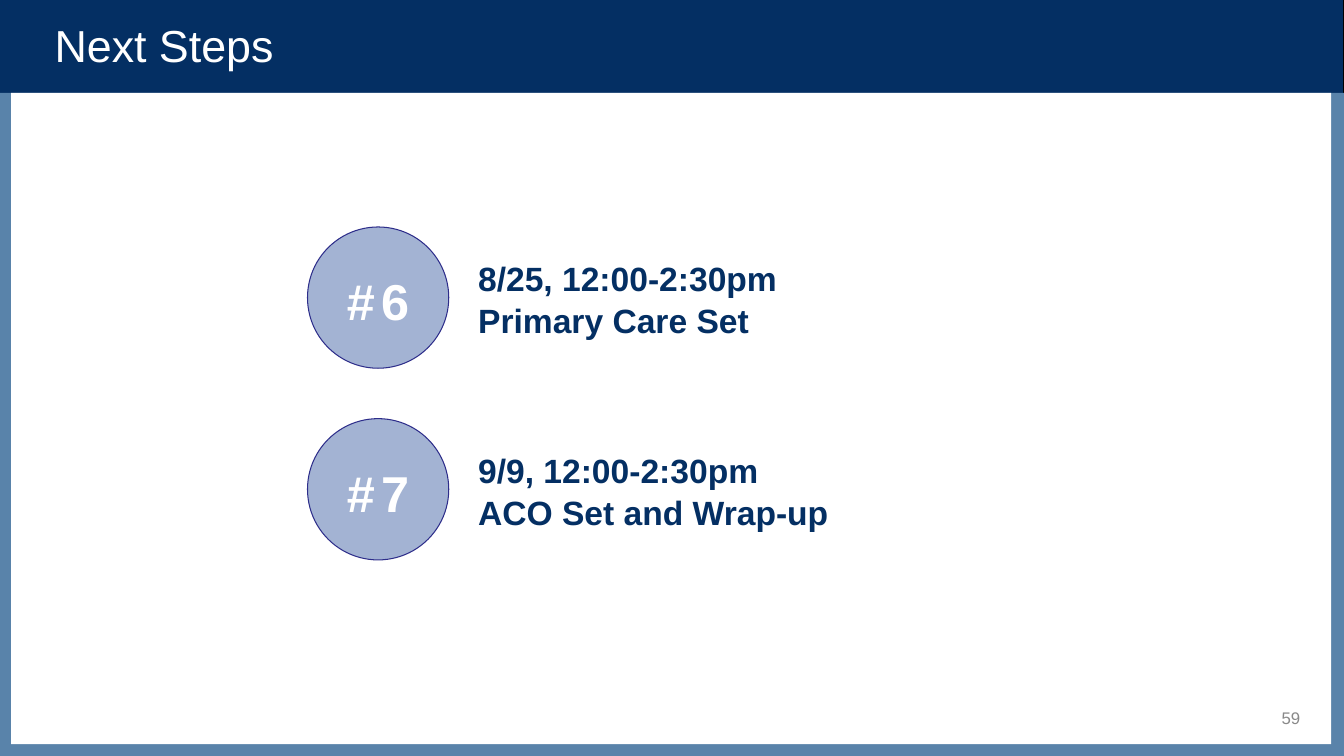
"""Build the "Next Steps" slide with the two upcoming meetings."""
from pptx import Presentation
from pptx.dml.color import RGBColor
from pptx.enum.shapes import MSO_SHAPE
from pptx.enum.text import MSO_ANCHOR, MSO_AUTO_SIZE, PP_ALIGN
from pptx.util import Cm, Pt

NAVY = RGBColor(0x04, 0x2F, 0x63)
STEEL = RGBColor(0x59, 0x83, 0xAA)
PALE_BLUE = RGBColor(0xA3, 0xB3, 0xD3)
INDIGO = RGBColor(0x2D, 0x2D, 0x8A)
GREY = RGBColor(0x89, 0x89, 0x89)
WHITE = RGBColor(0xFF, 0xFF, 0xFF)
BLACK = RGBColor(0x00, 0x00, 0x00)


def add_area(shapes, preset, left, top, width, height, fill, outline=None):
    area = shapes.add_shape(preset, Cm(left), Cm(top), Cm(width), Cm(height))
    area.shadow.inherit = False
    area.fill.solid()
    area.fill.fore_color.rgb = fill
    if outline is None:
        area.line.fill.background()
    else:
        area.line.color.rgb = outline
        area.line.width = Pt(0.75)


def style(paragraph, size, color, bold=False, align=PP_ALIGN.LEFT):
    paragraph.alignment = align
    paragraph.font.name = "Arial"
    paragraph.font.size = Pt(size)
    paragraph.font.bold = bold
    paragraph.font.color.rgb = color


presentation = Presentation()
presentation.slide_width = Cm(33.87)
presentation.slide_height = Cm(19.05)
slide = presentation.slides.add_slide(presentation.slide_layouts[5])

add_area(slide.shapes, MSO_SHAPE.RECTANGLE, 0, 0, 33.87, 2.35, NAVY, BLACK)
add_area(slide.shapes, MSO_SHAPE.RECTANGLE, 0, 2.34, 33.93, 16.73, STEEL)
add_area(slide.shapes, MSO_SHAPE.RECTANGLE, 0.28, 2.34, 33.27, 16.41, WHITE)

title = slide.shapes.title
title.element.getparent().append(title.element)
title.left, title.top, title.width, title.height = Cm(1.12), Cm(0.2), Cm(31.6), Cm(1.83)
title.text_frame.text = "Next Steps"
title.text_frame.vertical_anchor = MSO_ANCHOR.MIDDLE
style(title.text_frame.paragraphs[0], 32, WHITE)

page_number = slide.shapes.add_textbox(Cm(31.04), Cm(17.78), Cm(1.98), Cm(0.64)).text_frame
page_number.word_wrap = True
page_number.vertical_anchor = MSO_ANCHOR.MIDDLE
page_number.text = "59"
style(page_number.paragraphs[0], 12, GREY, align=PP_ALIGN.RIGHT)

meetings = [
    ("6", "8/25, 12:00-2:30pm", "Primary Care Set"),
    ("7", "9/9, 12:00-2:30pm", "ACO Set and Wrap-up"),
]
for row, (number, time, topic) in enumerate(meetings):
    top = 5.72 + row * 4.83
    meeting = slide.shapes.add_group_shape().shapes

    details = meeting.add_textbox(Cm(11.33), Cm(top + 0.6), Cm(14.78), Cm(2.31)).text_frame
    details.word_wrap = True
    details.auto_size = MSO_AUTO_SIZE.SHAPE_TO_FIT_TEXT
    details.margin_left = Cm(0.72)
    details.text = f"{time}\n{topic}"
    for paragraph in details.paragraphs:
        style(paragraph, 24, NAVY, bold=True)
        paragraph.line_spacing = 1.05

    add_area(meeting, MSO_SHAPE.OVAL, 7.75, top, 3.56, 3.56, PALE_BLUE, INDIGO)

    badge = meeting.add_textbox(Cm(8.38), Cm(top + 0.89), Cm(2.29), Cm(1.78)).text_frame
    badge.word_wrap = True
    badge.auto_size = MSO_AUTO_SIZE.SHAPE_TO_FIT_TEXT
    label = badge.paragraphs[0]
    style(label, 36, WHITE, bold=True, align=PP_ALIGN.CENTER)
    label.line_spacing = 1.05
    for text, size in (("#", 36), (" ", 16), (number, 36)):
        run = label.add_run()
        run.text = text
        run.font.size = Pt(size)

presentation.save("out.pptx")
